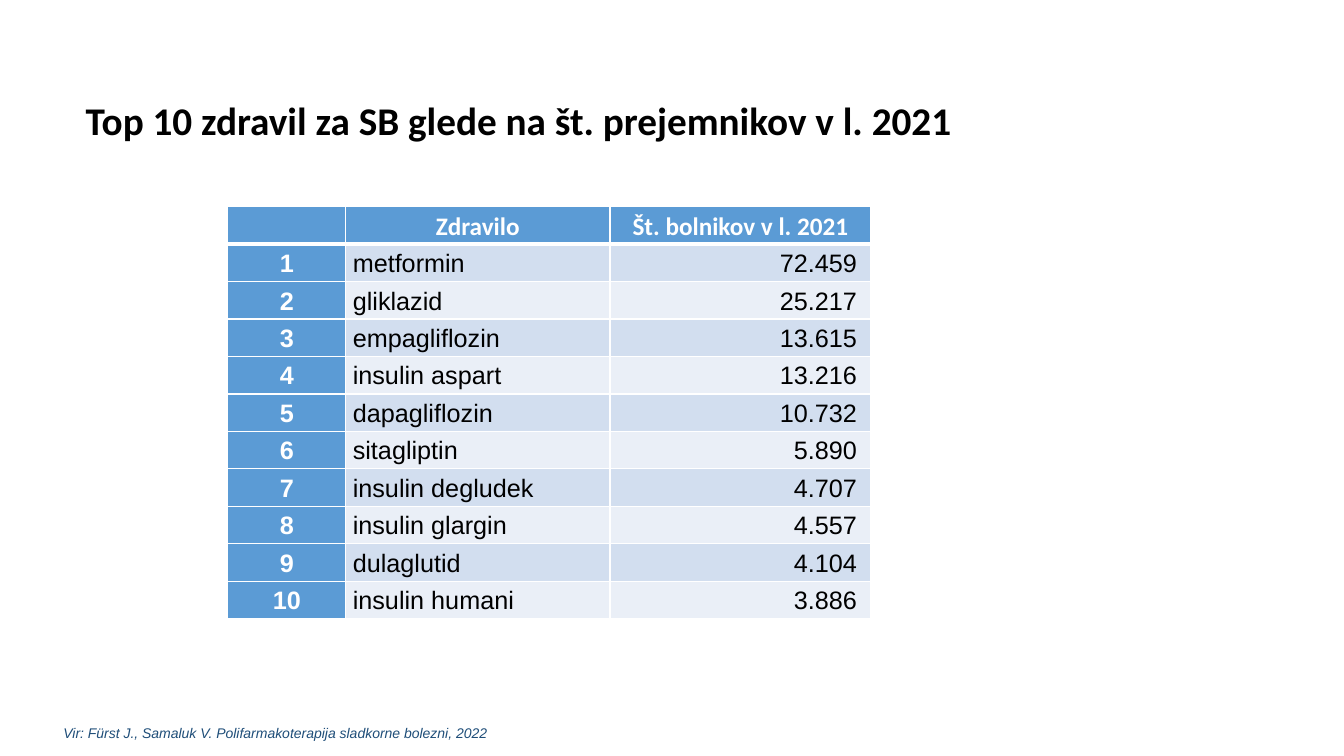
from lxml import etree
from pptx import Presentation
from pptx.dml.color import RGBColor
from pptx.enum.text import MSO_ANCHOR, MSO_AUTO_SIZE, PP_ALIGN
from pptx.oxml.ns import qn
from pptx.util import Inches, Pt

LEFT, CENTER, RIGHT = PP_ALIGN.LEFT, PP_ALIGN.CENTER, PP_ALIGN.RIGHT
MIDDLE = MSO_ANCHOR.MIDDLE
NO_AUTOFIT = MSO_AUTO_SIZE.NONE

BLACK = RGBColor(0x00, 0x00, 0x00)
WHITE = RGBColor(0xFF, 0xFF, 0xFF)
BLUE = RGBColor(0x5B, 0x9B, 0xD5)
DARK_BAND = RGBColor(0xD2, 0xDE, 0xEF)
LIGHT_BAND = RGBColor(0xEA, 0xEF, 0xF7)
NAVY = RGBColor(0x1F, 0x4E, 0x79)

WIDTH, HEIGHT = 13.33, 7.5
TITLE_LEFT, TABLE_LEFT, SOURCE_LEFT = 0.75, 2.26, 0.53
TABLE_TOP, TABLE_HEIGHT = 2.05, 4.09
COLUMN_WIDTHS = (1.17, 2.62, 2.59)
ALIGNMENTS = (CENTER, LEFT, RIGHT)
CELL_INSET, NUMBER_INSET = 0.07, 0.14
THIN, THICK = 1, 3

TITLE = "Top 10 zdravil za SB glede na št. prejemnikov v l. 2021"
SOURCE = "Vir: Fürst J., Samaluk V. Polifarmakoterapija sladkorne bolezni, 2022"
HEADER = ("", "Zdravilo", "Št. bolnikov v l. 2021")
DRUGS = (
    ("metformin", "72.459"),
    ("gliklazid", "25.217"),
    ("empagliflozin", "13.615"),
    ("insulin aspart", "13.216"),
    ("dapagliflozin", "10.732"),
    ("sitagliptin", "5.890"),
    ("insulin degludek", "4.707"),
    ("insulin glargin", "4.557"),
    ("dulaglutid", "4.104"),
    ("insulin humani", "3.886"),
)


def write(frame, text, *, size, color, font="Arial", bold=False, italic=False,
          align=LEFT, spacing=None, after=None):
    """Write one formatted paragraph into a text frame."""
    para = frame.paragraphs[0]
    para.alignment = align
    para.line_spacing = spacing
    para.space_after = None if after is None else Pt(after)
    para.font.size = Pt(size)
    if not text:
        return
    span = para.add_run()
    span.text = text
    span.font.name = font
    span.font.size = Pt(size)
    span.font.bold = bold
    span.font.italic = italic
    span.font.color.rgb = color


def draw_borders(cell, widths):
    """Give a cell white borders with widths for left, right, top and bottom."""
    properties = cell._tc.get_or_add_tcPr()
    for index, (side, width) in enumerate(zip("LRTB", widths)):
        line = etree.Element(qn(f"a:ln{side}"), w=str(Pt(width)))
        fill = etree.SubElement(line, qn("a:solidFill"))
        etree.SubElement(fill, qn("a:srgbClr"), val=str(WHITE))
        properties.insert(index, line)


def fill_cell(cell, row, column, text):
    """Style one cell by its place in the table and write its text."""
    strong = row == 0 or column == 0
    band = DARK_BAND if row % 2 else LIGHT_BAND
    cell.fill.solid()
    cell.fill.fore_color.rgb = BLUE if strong else band
    cell.vertical_anchor = MIDDLE
    cell.margin_top = cell.margin_bottom = 0
    cell.margin_left = Inches(CELL_INSET)
    is_number = row > 0 and column == 2
    cell.margin_right = Inches(NUMBER_INSET if is_number else CELL_INSET)
    draw_borders(cell, (THIN, THIN, THICK if row == 1 else THIN,
                        THICK if row == 0 else THIN))
    write(cell.text_frame, text, size=18, bold=strong,
          font="Calibri" if row == 0 else "Arial",
          color=WHITE if strong else BLACK,
          align=CENTER if row == 0 else ALIGNMENTS[column],
          spacing=1.07, after=8)


def add_title(page):
    """Place and format the title placeholder."""
    title = page.shapes.title
    title.left, title.top = Inches(TITLE_LEFT), Inches(0.71)
    title.width, title.height = Inches(10.98), Inches(1.01)
    frame = title.text_frame
    frame.auto_size = NO_AUTOFIT
    frame.vertical_anchor = MIDDLE
    write(frame, TITLE, size=28, color=BLACK, font="Calibri", bold=True,
          spacing=0.9)


def add_drug_table(page):
    """Add the ranking of drugs by number of patients."""
    rows = [HEADER] + [(str(rank), *drug) for rank, drug in enumerate(DRUGS, 1)]
    table = page.shapes.add_table(
        len(rows), len(HEADER), Inches(TABLE_LEFT), Inches(TABLE_TOP),
        Inches(sum(COLUMN_WIDTHS)), Inches(TABLE_HEIGHT)).table
    table.first_col = True
    for column, width in zip(table.columns, COLUMN_WIDTHS):
        column.width = Inches(width)
    for row, texts in enumerate(rows):
        for column, text in enumerate(texts):
            fill_cell(table.cell(row, column), row, column, text)


def add_source(page):
    """Add the source line at the foot of the slide."""
    box = page.shapes.add_textbox(Inches(SOURCE_LEFT), Inches(7.14),
                                  Inches(7.85), Inches(0.27))
    box.text_frame.word_wrap = True
    write(box.text_frame, SOURCE, size=10, color=NAVY, italic=True)


def main():
    """Build the slide and save the deck."""
    deck = Presentation()
    deck.slide_width, deck.slide_height = Inches(WIDTH), Inches(HEIGHT)
    page = deck.slides.add_slide(deck.slide_layouts[5])
    add_title(page)
    add_drug_table(page)
    add_source(page)
    deck.save("out.pptx")


if __name__ == "__main__":
    main()
